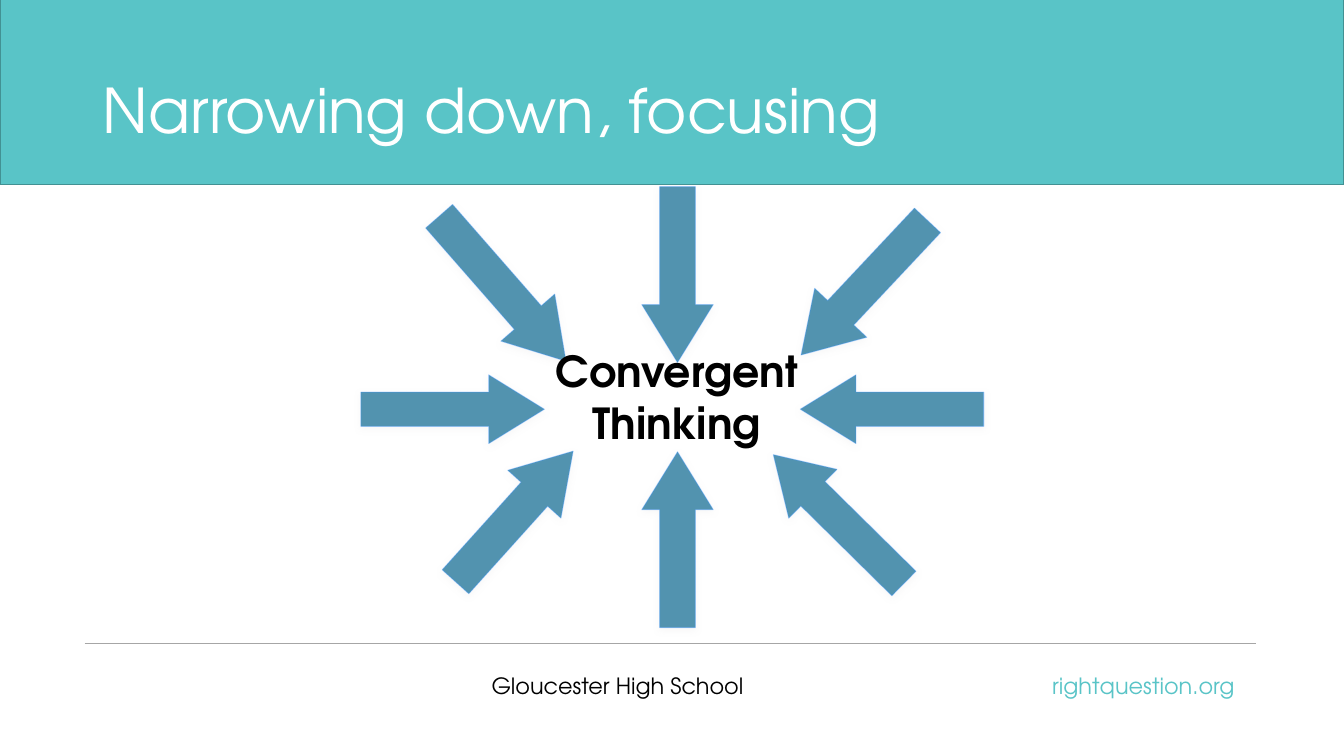
from lxml import etree
from pptx import Presentation
from pptx.dml.color import RGBColor
from pptx.enum.shapes import MSO_CONNECTOR as CONN, MSO_SHAPE as SHAPE
from pptx.enum.text import MSO_ANCHOR as ANCHOR, PP_ALIGN as ALIGN
from pptx.oxml.ns import qn
from pptx.util import Pt

FONT = "TeX Gyre Adventor"
TEAL = RGBColor(0x59, 0xC4, 0xC7)
TEAL_DARK = RGBColor(0x42, 0x91, 0x93)
GREY = RGBColor(0xA6, 0xA6, 0xA6)
ARROW_FILL = RGBColor(0x2C, 0x7C, 0x9F)
ARROW_LINE = RGBColor(0x3A, 0x93, 0xFF)
SHADOW = RGBColor(0xE7, 0xE6, 0xE6)
BLACK = RGBColor(0, 0, 0)
WHITE = RGBColor(0xFF, 0xFF, 0xFF)


def add_text(s, box, lines, size, color, align=ALIGN.LEFT,
             anchor=ANCHOR.TOP, bold=False, spacing=0.9):
    tf = s.shapes.add_textbox(*map(Pt, box)).text_frame
    tf.word_wrap = True
    tf.vertical_anchor = anchor
    for i, line in enumerate(lines):
        p = tf.add_paragraph() if i else tf.paragraphs[0]
        p.alignment = align
        p.line_spacing = spacing
        r = p.add_run()
        r.text = line
        r.font.name = FONT
        r.font.size = Pt(size)
        r.font.bold = bold
        r.font.color.rgb = color


def set_alpha(color, percent):
    etree.SubElement(color, qn("a:alpha"), val=str(percent * 1000))


prs = Presentation()
prs.slide_width = Pt(960)
prs.slide_height = Pt(540)
s = prs.slides.add_slide(prs.slide_layouts[6])

band = s.shapes.add_shape(SHAPE.RECTANGLE, Pt(0), Pt(-1.4), Pt(960), Pt(133.2))
band.shadow.inherit = False
band.fill.solid()
band.fill.fore_color.rgb = TEAL
band.line.color.rgb = TEAL_DARK
band.line.width = Pt(1)

add_text(s, (344, 479, 217, 48), ["Gloucester High School"], 16, BLACK)
add_text(s, (672, 479, 217, 48), ["rightquestion.org"], 16, TEAL, ALIGN.RIGHT)

rule = s.shapes.add_connector(CONN.STRAIGHT, Pt(60.5), Pt(459.4), Pt(897), Pt(459.4))
rule.line.color.rgb = GREY
rule.line.width = Pt(0.5)
etree.SubElement(rule._element.spPr, qn("a:effectLst"))

arrows = [
    (290.2, 180.7, 137.5, 51, 228.8),
    (257.8, 267.8, 131, 49, 180),
    (571.7, 267.8, 131, 49, 0),
    (421.2, 170.6, 125.5, 51, 270),
    (551.5, 180, 131.8, 51, 313.2),
    (304.6, 343.4, 125.5, 51, 132),
    (421.2, 360, 125.5, 51, 90),
    (533.5, 346.3, 131, 49, 44.6),
]
for *box, angle in arrows:
    sp = s.shapes.add_shape(SHAPE.LEFT_ARROW, *map(Pt, box))
    sp.rotation = angle
    sp.adjustments[0] = 0.5
    sp.adjustments[1] = 0.81
    sp.fill.solid()
    sp.fill.fore_color.rgb = ARROW_FILL
    sp.line.color.rgb = ARROW_LINE
    sp.line.width = Pt(0.75)
    sp.shadow.inherit = False
    effects = sp._element.spPr.find(qn("a:effectLst"))
    shadow = etree.SubElement(
        effects, qn("a:outerShdw"), blurRad=str(Pt(5)), dist=str(Pt(1.8)),
        dir="5400000", rotWithShape="0")
    etree.SubElement(shadow, qn("a:srgbClr"), val=str(SHADOW))
    for color, percent in zip(sp._element.spPr.iter(qn("a:srgbClr")), (81, 34, 35)):
        set_alpha(color, percent)

add_text(s, (368, 245.5, 231, 77.8), ["Convergent", "Thinking"], 30.5, BLACK,
         ALIGN.CENTER, ANCHOR.BOTTOM, bold=True, spacing=1.0)
add_text(s, (66, 28.8, 828, 104.4), ["Narrowing down, focusing"], 44, WHITE,
         anchor=ANCHOR.MIDDLE)

prs.save("out.pptx")
